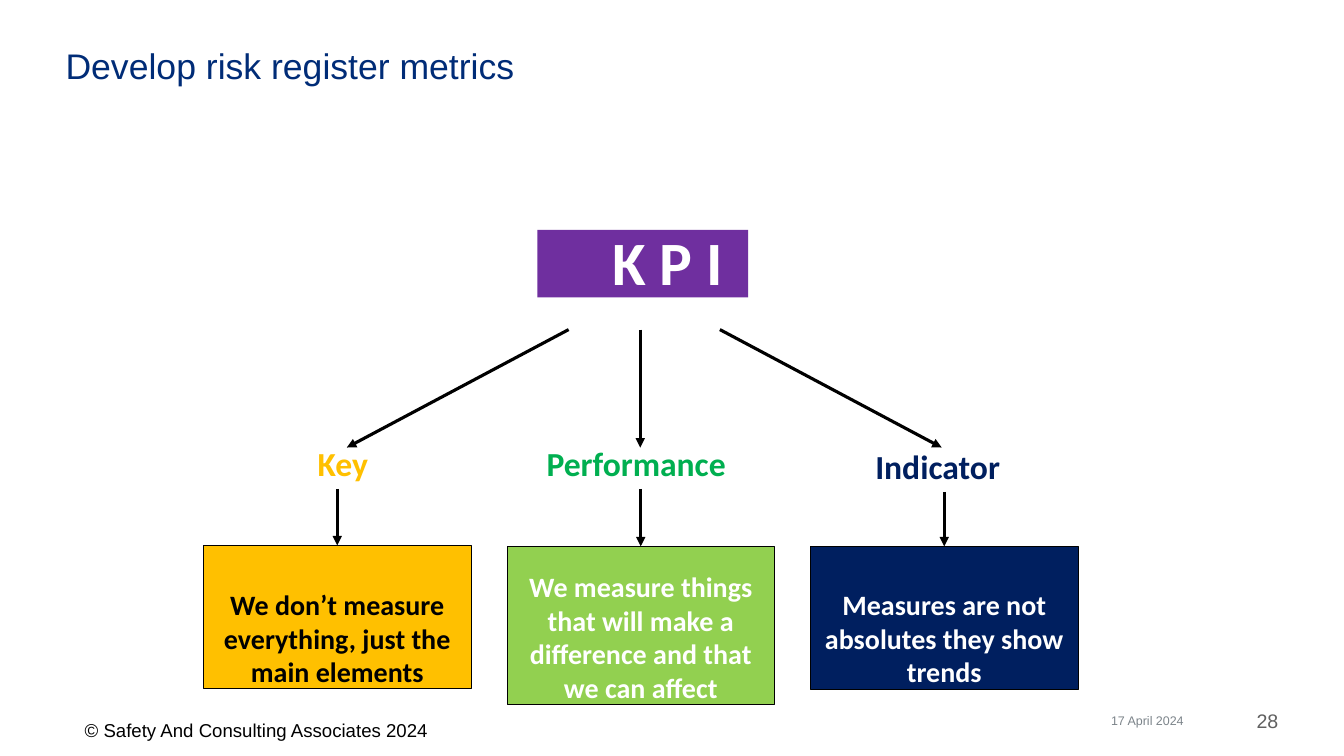
from dataclasses import dataclass

from lxml.etree import SubElement
from pptx import Presentation
from pptx.dml.color import RGBColor
from pptx.enum.shapes import MSO_CONNECTOR, MSO_SHAPE
from pptx.enum.text import MSO_ANCHOR, PP_ALIGN
from pptx.oxml.ns import qn
from pptx.util import Inches, Pt


@dataclass(frozen=True)
class Theme:
    heading_font: str = "Arial"
    diagram_font: str = "Calibri"
    title_colour: str = "002C77"
    black: str = "000000"
    white: str = "FFFFFF"
    purple: str = "6F2F9F"
    amber: str = "FFC000"
    green: str = "00AF50"
    light_green: str = "92D050"
    navy: str = "001F5F"
    number_grey: str = "606060"
    date_grey: str = "7C848A"
    title_size: float = 25.4
    kpi_size: float = 44
    label_size: float = 24
    box_size: float = 20
    copyright_size: float = 13.3
    number_size: float = 14
    date_size: float = 8.9


THEME = Theme()

# Per column: word, word colour, word top, arrow start and tip x,
# box fill, box text colour, box top and height, text inset, text
COLUMNS = [
    ("Key", THEME.amber, 4.37, 5.64, 3.44, THEME.amber, THEME.black,
     5.41, 1.42, 0.42, "We don’t measure everything, just the main elements"),
    ("Performance", THEME.green, 4.37, 6.35, 6.35, THEME.light_green, THEME.white,
     5.42, 1.57, 0.23, "We measure things that will make a difference and that we can affect"),
    ("Indicator", THEME.navy, 4.4, 7.14, 9.34, THEME.navy, THEME.white,
     5.42, 1.42, 0.41, "Measures are not absolutes they show trends"),
]
BOX_LEFT, BOX_WIDTH, BOX_PITCH = 2.02, 2.65, 3.01
LABEL_WIDTH, LABEL_HEIGHT, LABEL_SHIFT = 2.0, 0.42, -0.04


def write_text(shape, text, font_name, size, colour, bold=False,
               align=PP_ALIGN.LEFT, anchor=MSO_ANCHOR.TOP, insets=(0, 0, 0, 0)):
    """Fill a shape with one paragraph; insets are left, top, right, bottom."""
    frame = shape.text_frame
    frame.word_wrap = True
    frame.vertical_anchor = anchor
    (frame.margin_left, frame.margin_top,
     frame.margin_right, frame.margin_bottom) = map(Inches, insets)
    frame.text = text
    paragraph = frame.paragraphs[0]
    paragraph.alignment = align
    paragraph.font.name = font_name
    paragraph.font.size = Pt(size)
    paragraph.font.bold = bold
    paragraph.font.color.rgb = RGBColor.from_string(colour)
    return paragraph


def add_label(slide, area, text, font_name, size, colour, **options):
    label = slide.shapes.add_textbox(*map(Inches, area))
    write_text(label, text, font_name, size, colour, **options)


def add_box(slide, area, fill, outlined=True):
    box = slide.shapes.add_shape(MSO_SHAPE.RECTANGLE, *map(Inches, area))
    box.shadow.inherit = False
    box.fill.solid()
    box.fill.fore_color.rgb = RGBColor.from_string(fill)
    if outlined:
        box.line.color.rgb = RGBColor.from_string(THEME.black)
        box.line.width = Pt(0.25)
    else:
        box.line.fill.background()
    return box


def add_arrow(slide, start, end, target=None):
    """Draw an arrow, joined to the top of the target box if there is one."""
    arrow = slide.shapes.add_connector(
        MSO_CONNECTOR.STRAIGHT, *map(Inches, (*start, *end)))
    if target is not None:
        arrow.end_connect(target, 0)
    arrow.line.color.rgb = RGBColor.from_string(THEME.black)
    arrow.line.width = Pt(2.25)
    SubElement(arrow.line._get_or_add_ln(), qn("a:tailEnd"), type="triangle")
    SubElement(arrow._element.spPr, qn("a:effectLst"))


def add_title(slide, text):
    title = slide.shapes.title
    title.left, title.top, title.width, title.height = map(
        Inches, (0.64, 0.42, 12.05, 0.83))
    write_text(title, text, THEME.heading_font, THEME.title_size,
               THEME.title_colour, insets=(0.01, 0.02, 0, 0))


def add_kpi(slide):
    box = add_box(slide, (5.33, 2.28, 2.09, 0.67), THEME.purple, outlined=False)
    paragraph = write_text(box, "K P I", THEME.diagram_font, THEME.kpi_size,
                           THEME.white, bold=True, align=PP_ALIGN.CENTER,
                           insets=(0.49, 0, 0, 0))
    paragraph.line_spacing = Pt(48.3)


def add_column(slide, index, column):
    (word, word_colour, word_top, start_x, tip_x, fill, text_colour,
     box_top, box_height, text_inset, text) = column
    left = BOX_LEFT + index * BOX_PITCH
    center = left + BOX_WIDTH / 2

    # Word under the KPI arrow
    add_arrow(slide, (start_x, 3.27), (tip_x, 4.44))
    label_left = tip_x + LABEL_SHIFT - LABEL_WIDTH / 2
    add_label(slide, (label_left, word_top, LABEL_WIDTH, LABEL_HEIGHT), word,
              THEME.diagram_font, THEME.label_size, word_colour, bold=True,
              align=PP_ALIGN.CENTER, insets=(0, 0.02, 0, 0))

    # Explanation box
    box = add_box(slide, (left, box_top, BOX_WIDTH, box_height), fill)
    write_text(box, text, THEME.diagram_font, THEME.box_size, text_colour,
               bold=True, align=PP_ALIGN.CENTER, insets=(0.1, text_inset, 0.1, 0))
    add_arrow(slide, (center, word_top + 0.48), (center, box_top), box)


def add_footer(slide):
    add_label(slide, (0.84, 7.13, 4, 0.22), "© Safety And Consulting Associates 2024",
              THEME.heading_font, THEME.copyright_size, THEME.black)
    add_label(slide, (11.02, 7.07, 1.43, 0.15), "17 April 2024",
              THEME.heading_font, THEME.date_size, THEME.date_grey,
              anchor=MSO_ANCHOR.BOTTOM)
    add_label(slide, (11.85, 7.03, 0.83, 0.24), "28",
              THEME.heading_font, THEME.number_size, THEME.number_grey,
              align=PP_ALIGN.RIGHT, anchor=MSO_ANCHOR.BOTTOM)


def main():
    presentation = Presentation()
    presentation.slide_width = Inches(13.33)
    presentation.slide_height = Inches(7.5)
    slide = presentation.slides.add_slide(presentation.slide_layouts[5])

    add_title(slide, "Develop risk register metrics")
    add_kpi(slide)
    for index, column in enumerate(COLUMNS):
        add_column(slide, index, column)
    add_footer(slide)

    presentation.save("out.pptx")


if __name__ == "__main__":
    main()
